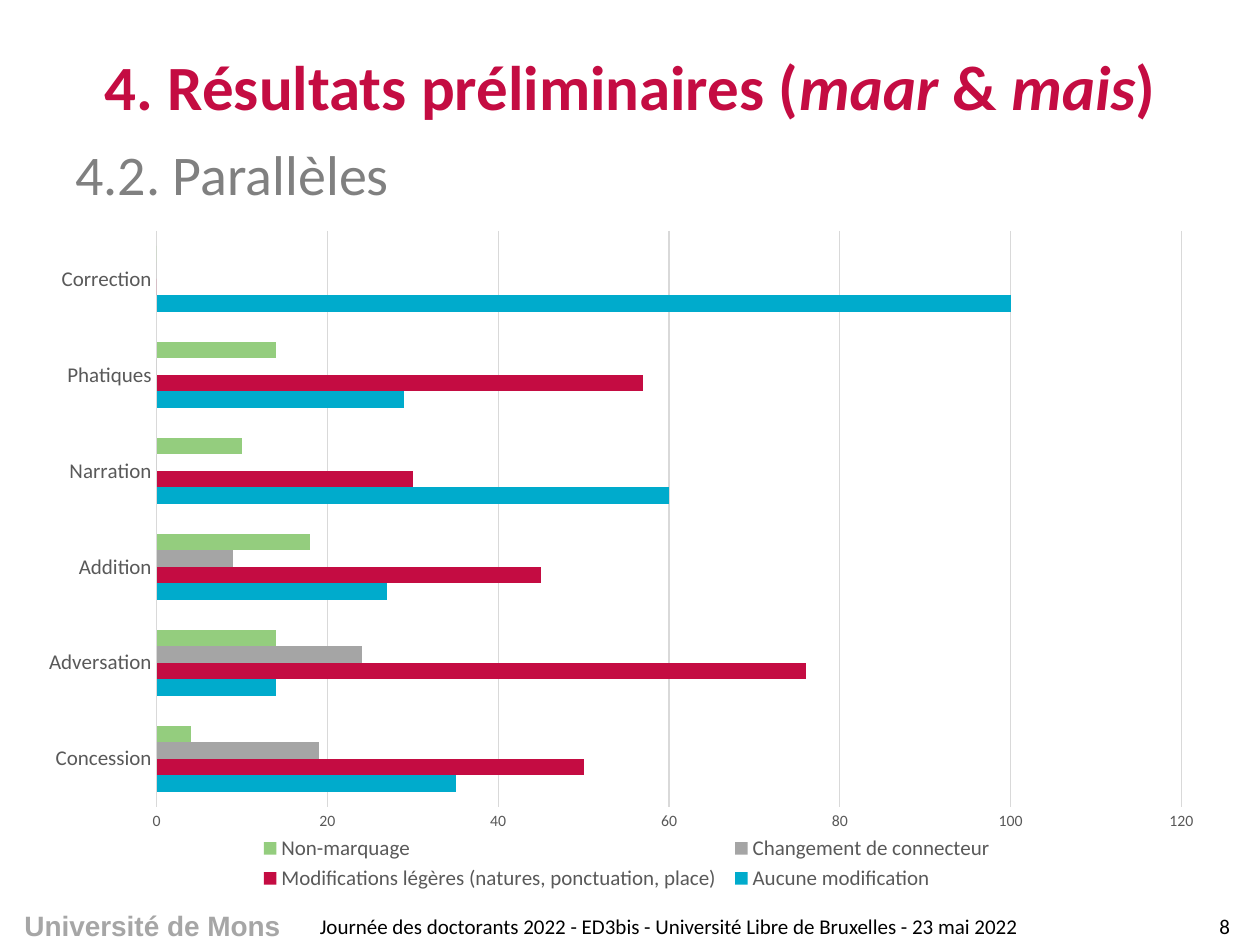
from lxml import etree
from pptx import Presentation
from pptx.chart.data import CategoryChartData as ChartData
from pptx.dml.color import RGBColor
from pptx.enum.chart import XL_CHART_TYPE as Chart, XL_LEGEND_POSITION as Legend, XL_TICK_MARK as Tick
from pptx.enum.text import MSO_ANCHOR as Anchor, PP_ALIGN as Align
from pptx.oxml.ns import qn
from pptx.util import Inches, Pt

RED = RGBColor(0xC4, 0x0C, 0x42)
BLUE = RGBColor(0x00, 0xAB, 0xCC)
GREEN = RGBColor(0x94, 0xCD, 0x7E)
GRAY = RGBColor(0xA5, 0xA5, 0xA5)
SILVER = RGBColor(0xA6, 0xA6, 0xA6)
MID = RGBColor(0x80, 0x80, 0x80)
DARK = RGBColor(0x59, 0x59, 0x59)
PALE = RGBColor(0xD9, 0xD9, 0xD9)
BLACK = RGBColor(0, 0, 0)


def style(font, size, color, bold=False, name="Calibri"):
    font.name = name
    font.size = Pt(size)
    font.bold = bold
    font.color.rgb = color


deck = Presentation()
deck.slide_width, deck.slide_height = Inches(10), Inches(7.5)
slide = deck.slides.add_slide(deck.slide_layouts[5])

# Title, closed by a line break
title = slide.shapes.title
title.left, title.top = Inches(0.5), Inches(0.4)
title.width, title.height = Inches(9), Inches(1.15)
title.text_frame.vertical_anchor = Anchor.MIDDLE
para = title.text_frame.paragraphs[0]
para.alignment = Align.CENTER
style(para.font, 36, RED, True)
parts = ["4. Résultats préliminaires (", "maar", " & ", "mais", ")"]
for i, part in enumerate(parts):
    run = para.add_run()
    run.text = part
    style(run.font, 36, RED, True)
    run.font.italic = i % 2 == 1
para.add_line_break()

# Subtitle and footer: text, box, size, colour, bold, font, alignment, anchor
texts = [
    ("4.2. Parallèles", (0.5, 1.06, 9, 5.64),
     32, MID, False, "Calibri", Align.LEFT, Anchor.TOP),
    ("Université de Mons", (-0.01, 7.16, 2.44, 0.37),
     16, SILVER, True, "Arial", Align.CENTER, Anchor.TOP),
    ("Journée des doctorants 2022 - ED3bis - Université Libre de Bruxelles - 23 mai 2022",
     (2.44, 7.2, 7, 0.3), 12, BLACK, False, "Calibri", Align.LEFT, Anchor.MIDDLE),
    ("8", (9.44, 7.2, 0.56, 0.3),
     12, BLACK, False, "Calibri", Align.CENTER, Anchor.MIDDLE),
]
for text, box, size, color, bold, name, align, anchor in texts:
    frame = slide.shapes.add_textbox(*map(Inches, box)).text_frame
    frame.word_wrap = True
    frame.vertical_anchor = anchor
    frame.text = text
    para = frame.paragraphs[0]
    para.alignment = align
    style(para.runs[0].font, size, color, bold, name)

# Bar chart
series = [
    ("Aucune modification", (35, 14, 27, 60, 29, 100), BLUE),
    ("Modifications légères (natures, ponctuation, place) ", (50, 76, 45, 30, 57, 0), RED),
    ("Changement de connecteur", (19, 24, 9, 0, 0, 0), GRAY),
    ("Non-marquage", (4, 14, 18, 10, 14, 0), GREEN),
]
data = ChartData()
data.categories = ["Concession", "Adversation", "Addition", "Narration", "Phatiques", "Correction"]
for name, vals, color in series:
    data.add_series(name, vals)
box = map(Inches, (0.19, 1.67, 9.57, 5.44))
chart = slide.shapes.add_chart(Chart.BAR_CLUSTERED, *box, data).chart
chart.has_title = False
style(chart.font, 10, BLACK)
plot = chart.plots[0]
plot.gap_width = 182
plot.overlap = 0
plot.vary_by_categories = False
for bar, (name, vals, color) in zip(plot.series, series):
    bar.format.fill.solid()
    bar.format.fill.fore_color.rgb = color

# Axes
cat, val = chart.category_axis, chart.value_axis
for axis, size in ((cat, 12), (val, 9)):
    axis.major_tick_mark = axis.minor_tick_mark = Tick.NONE
    style(axis.tick_labels.font, size, DARK)
val.minimum_scale, val.maximum_scale, val.major_unit = 0, 120, 20
val.has_major_gridlines = True
val.format.line.fill.background()
for line in (cat.format.line, val.major_gridlines.format.line):
    line.color.rgb = PALE
    line.width = Pt(0.75)

# Legend
chart.has_legend = True
chart.legend.position = Legend.BOTTOM
chart.legend.include_in_layout = False
style(chart.legend.font, 12, DARK)

# Plot area position, as shares of the chart
area = chart._chartSpace.chart.plotArea
for old in area.findall(qn("c:layout")):
    area.remove(old)
layout = etree.Element(qn("c:layout"))
area.insert(0, layout)
manual = etree.SubElement(layout, qn("c:manualLayout"))
for tag, value in (("layoutTarget", "inner"), ("xMode", "edge"), ("yMode", "edge"),
                   ("x", 0.11), ("y", 0.03), ("w", 0.85), ("h", 0.84)):
    etree.SubElement(manual, qn("c:" + tag)).set("val", str(value))

deck.save("out.pptx")
